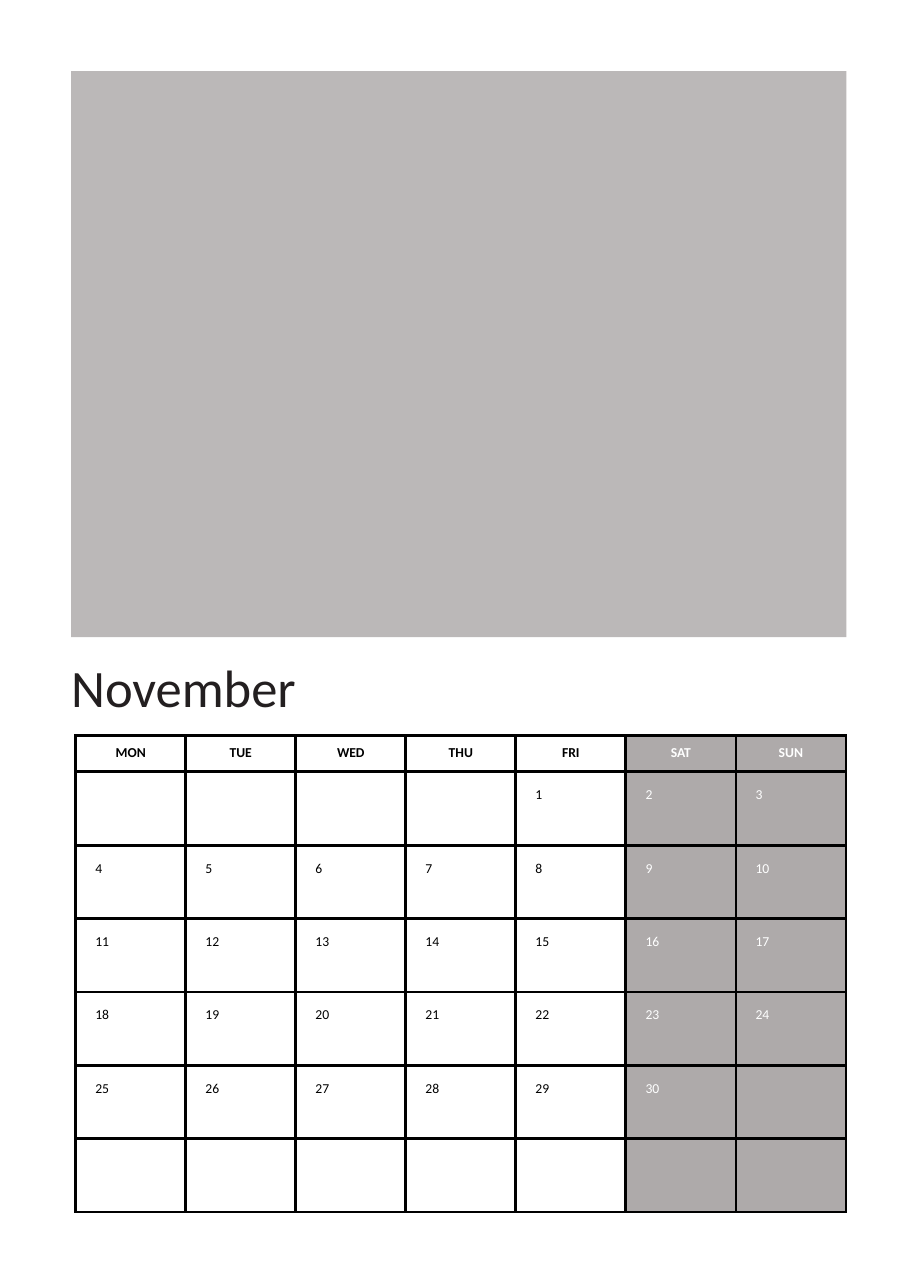
import pptx
import pptx.util
import pptx.dml.color
import pptx.enum.text
import pptx.enum.shapes
import pptx.oxml
import pptx.oxml.ns

Inches = pptx.util.Inches
Align = pptx.enum.text.PP_ALIGN

MONTH = "November"
DAYS = ["MON", "TUE", "WED", "THU", "FRI", "SAT", "SUN"]
START = 4
COUNT = 30
WEEKS = 6
WORK = 5

HUES = {"ink": "231F20", "black": "000000", "white": "FFFFFF",
        "photo": "BBB8B8", "rest": "AEAAAA"}
LEFT, TOP, WIDE, HIGH = 0.5, 4.86, 5.09, 3.15
HEAD = 0.24
LINE = 1.5


def color(name):
    return pptx.dml.color.RGBColor.from_string(HUES[name])


def write(frame, text, size=6.5, hue="black", bold=False, align=Align.LEFT):
    para = frame.paragraphs[0]
    para.alignment = align
    run = para.add_run()
    run.text = text
    font = run.font
    font.name = "Calibri"
    font.size = pptx.util.Pt(size)
    font.bold = bold
    font.color.rgb = color(hue)


def inset(box, left=0, top=0):
    box.margin_left, box.margin_top = Inches(left), Inches(top)
    box.margin_right = box.margin_bottom = 0
    box.vertical_anchor = pptx.enum.text.MSO_ANCHOR.TOP


def border(cell):
    props = cell._tc.get_or_add_tcPr()
    space = pptx.oxml.ns.nsdecls("a")
    for spot, side in enumerate(("lnL", "lnR", "lnT", "lnB")):
        props.insert(spot, pptx.oxml.parse_xml(
            f'<a:{side} {space} w="{pptx.util.Pt(LINE)}"><a:solidFill>'
            f'<a:srgbClr val="{HUES["black"]}"/></a:solidFill></a:{side}>'))


def main():
    deck = pptx.Presentation()
    deck.slide_width, deck.slide_height = Inches(6.07), Inches(8.51)
    slide = deck.slides.add_slide(deck.slide_layouts[5])

    title = slide.shapes.title
    title.left, title.top = Inches(0.47), Inches(4.31)
    title.width, title.height = Inches(1.51), Inches(0.44)
    frame = title.text_frame
    frame.auto_size = pptx.enum.text.MSO_AUTO_SIZE.NONE
    frame.word_wrap = False
    inset(frame, top=0.02)
    write(frame, MONTH, size=25, hue="ink")

    photo = slide.shapes.add_shape(
        pptx.enum.shapes.MSO_SHAPE.RECTANGLE,
        Inches(0.47), Inches(0.47), Inches(5.12), Inches(3.74))
    photo.shadow.inherit = False
    photo.fill.solid()
    photo.fill.fore_color.rgb = color("photo")
    photo.line.fill.background()

    table = slide.shapes.add_table(
        WEEKS + 1, len(DAYS), Inches(LEFT), Inches(TOP),
        Inches(WIDE), Inches(HIGH)).table
    table.first_row = table.horz_banding = False
    for col in table.columns:
        col.width = Inches(WIDE / len(DAYS))
    for row, line in enumerate(table.rows):
        line.height = Inches((HIGH - HEAD) / WEEKS if row else HEAD)
        for col, cell in enumerate(line.cells):
            rest = col >= WORK
            hue = "white" if rest else "black"
            cell.fill.solid()
            cell.fill.fore_color.rgb = color("rest" if rest else "white")
            border(cell)
            date = (row - 1) * len(DAYS) + col - START + 1
            if row == 0:
                inset(cell, top=0.06)
                write(cell.text_frame, DAYS[col], hue=hue, bold=True,
                      align=Align.CENTER)
            elif 1 <= date <= COUNT:
                inset(cell, left=0.13, top=0.1)
                write(cell.text_frame, str(date), hue=hue)

    deck.save("out.pptx")


if __name__ == "__main__":
    main()
